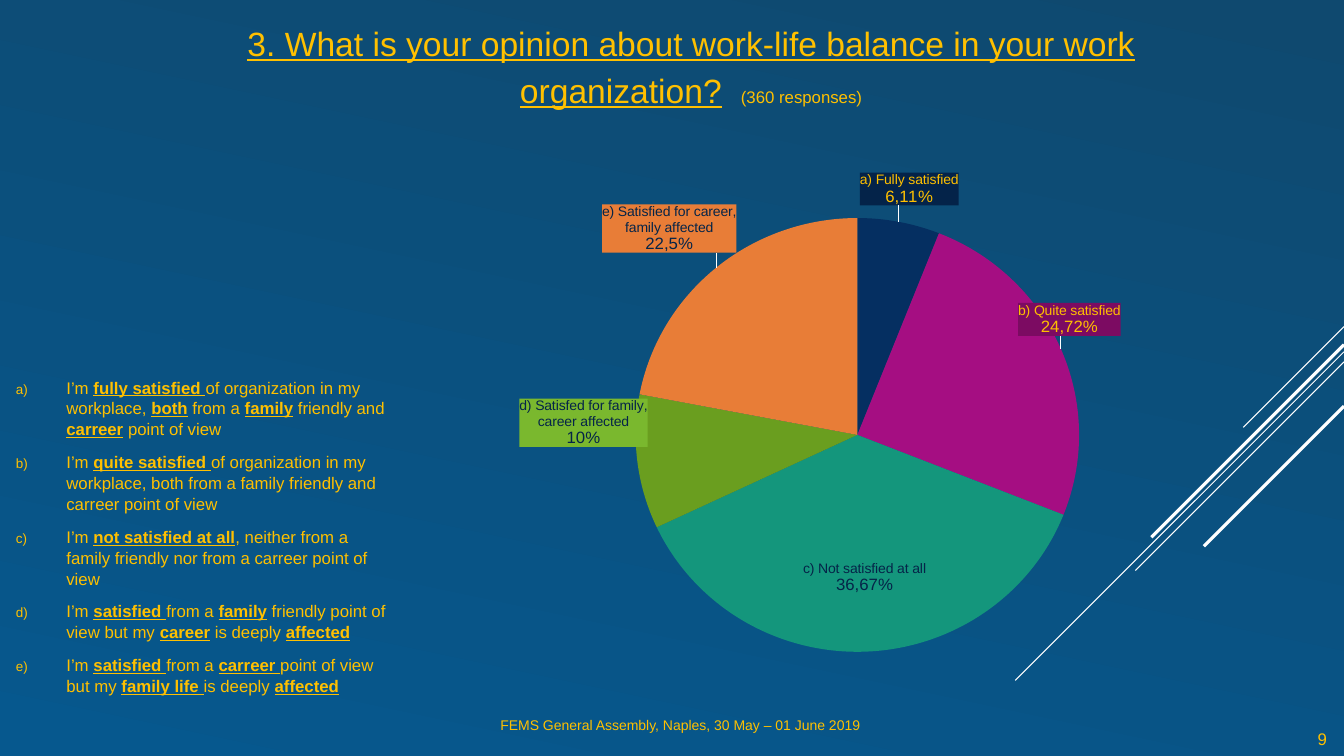
from lxml import etree
from pptx import Presentation
from pptx.chart.data import CategoryChartData
from pptx.dml.color import RGBColor
from pptx.enum.chart import XL_CHART_TYPE as ChartType, XL_LABEL_POSITION as LabelPosition
from pptx.enum.shapes import MSO_CONNECTOR as Connector
from pptx.enum.text import MSO_ANCHOR as Anchor, PP_ALIGN as Align
from pptx.oxml import parse_xml
from pptx.oxml.ns import nsdecls, qn
from pptx.util import Inches, Pt

FONT = "Arial"
GOLD = RGBColor(0xFF, 0xC0, 0x00)
WHITE = RGBColor(0xFF, 0xFF, 0xFF)
INK = RGBColor(0x05, 0x24, 0x48)
SKY_TOP = RGBColor(0x0F, 0x49, 0x6F)
SKY_BOTTOM = RGBColor(0x06, 0x58, 0x8E)
NAVY = RGBColor(0x05, 0x2F, 0x61)
NAVY_DARK = RGBColor(0x04, 0x23, 0x49)
PURPLE = RGBColor(0xA5, 0x0E, 0x82)
PURPLE_DARK = RGBColor(0x7C, 0x0B, 0x62)
TEAL = RGBColor(0x14, 0x96, 0x7C)
GREEN = RGBColor(0x6A, 0x9E, 0x1F)
GREEN_LIGHT = RGBColor(0x7A, 0xB8, 0x2E)
ORANGE = RGBColor(0xE8, 0x7D, 0x37)

# Right end, horizontal reach of the 45 degree stroke, width in points
STROKES = [(3.24, 1, 0.75), (3.49, 3.26, 0.75), (3.59, 2.07, 0.75),
           (3.42, 1.91, 2.25), (4.03, 1.39, 2.25)]

# Text between asterisks is bold and underlined
ANSWERS = [
    "I’m *fully satisfied *of organization in my workplace, *both* from a *family* "
    "friendly and *carreer* point of view",
    "I’m *quite satisfied *of organization in my workplace, both from a family "
    "friendly and carreer point of view",
    "I’m *not satisfied at all*, neither from a family friendly nor from a carreer "
    "point of view",
    "I’m *satisfied *from a *family* friendly point of view but my *career* is deeply "
    "*affected*",
    "I’m *satisfied *from a *carreer *point of view but my *family life *is deeply "
    "*affected*",
]

# Category, value, slice, label name, label share, label fill, label text, label shift
SLICES = [
    ("a", 6, NAVY, "a) Fully satisfied", "6,11%", NAVY_DARK, GOLD, (-0.05, -0.02)),
    ("b", 25, PURPLE, "b) Quite satisfied", "24,72%", PURPLE_DARK, GOLD, (-0.06, -0.02)),
    ("c", 37, TEAL, "c) Not satisfied at all", "36,67%", TEAL, INK, (0, -0.18)),
    ("d", 10, GREEN, "d) Satisfed for family, career affected", "10%",
     GREEN_LIGHT, INK, (0.02, -0.12)),
    ("e", 22, ORANGE, "e) Satisfied for career, family affected", "22,5%",
     ORANGE, INK, (0.03, -0.02)),
]


def add_span(para, text, size, color=GOLD, strong=False, underline=False):
    span = para.add_run()
    span.text = text
    font = span.font
    font.name, font.size, font.color.rgb = FONT, Pt(size), color
    font.bold, font.underline = strong, underline
    return span


def add_box(slide, left, top, width, height, anchor=Anchor.TOP):
    box = slide.shapes.add_textbox(Inches(left), Inches(top), Inches(width), Inches(height))
    frame = box.text_frame
    frame.word_wrap = True
    frame.vertical_anchor = anchor
    return frame


def add_line_of_text(slide, place, text, size, align, anchor=Anchor.TOP):
    para = add_box(slide, *place, anchor).paragraphs[0]
    para.alignment = align
    add_span(para, text, size)


def add_stroke(slide, right_y, reach, width):
    edge = 13.33
    line = slide.shapes.add_connector(Connector.STRAIGHT, Inches(edge), Inches(right_y),
                                      Inches(edge - reach), Inches(right_y + reach))
    line.line.color.rgb = WHITE
    line.line.width = Pt(width)
    etree.SubElement(line._element.spPr, qn("a:effectLst"))


def add_title(slide):
    para = add_box(slide, 1.91, 0.12, 9.89, 0.99).paragraphs[0]
    para.alignment = Align.CENTER
    para.line_spacing = 1.15
    add_span(para, "3. What is your opinion about work-life balance in your work "
                   "organization?", 24, underline=True)
    gap = add_span(para, " ", 24)
    gap.font._element.set("spc", "700")
    add_span(para, "(360 responses)", 12)


def add_answers(slide):
    frame = add_box(slide, 0.06, 3.47, 3.91, 3.7, Anchor.MIDDLE)
    for index, answer in enumerate(ANSWERS):
        para = frame.add_paragraph() if index else frame.paragraphs[0]
        props = para._p.get_or_add_pPr()
        props.set("marL", str(Inches(0.5)))
        props.set("indent", str(-Inches(0.5)))
        color = etree.SubElement(props, qn("a:buClr"))
        etree.SubElement(color, qn("a:srgbClr"), val=str(GOLD))
        etree.SubElement(props, qn("a:buSzPct"), val="80000")
        etree.SubElement(props, qn("a:buFont"), typeface=FONT)
        etree.SubElement(props, qn("a:buAutoNum"), type="alphaLcParenR")
        para.line_spacing = 1.04
        para.space_before = Pt(2.4 if index else 0)
        para.space_after = Pt(6)
        for part, text in enumerate(answer.split("*")):
            if text:
                marked = part % 2 == 1
                add_span(para, text, 12, strong=marked, underline=marked)


def layout_xml(x, y, extra=""):
    return parse_xml(f'<c:layout {nsdecls("c")}><c:manualLayout>{extra}'
                     f'<c:x val="{x}"/><c:y val="{y}"/></c:manualLayout></c:layout>')


def add_label(point, name, share, fill, color, shift):
    label = point.data_label
    frame = label.text_frame
    add_span(frame.paragraphs[0], name, 10, color)
    add_span(frame.add_paragraph(), share, 12, color)
    label.position = LabelPosition.OUTSIDE_END
    element = label._dLbl
    element.find(qn("c:idx")).addnext(layout_xml(*shift))
    element.find(qn("c:tx")).addnext(parse_xml(
        f'<c:spPr {nsdecls("c", "a")}><a:solidFill><a:srgbClr val="{fill}"/>'
        '</a:solidFill></c:spPr>'))


def add_pie(slide):
    data = CategoryChartData()
    data.categories = [row[0] for row in SLICES]
    data.add_series("Series 1", [row[1] for row in SLICES])
    chart = slide.shapes.add_chart(ChartType.PIE, Inches(4.24), Inches(1.42),
                                   Inches(7.97), Inches(5.43), data).chart
    chart.has_legend = chart.has_title = False
    chart.font.name, chart.font.size, chart.font.color.rgb = FONT, Pt(10), WHITE
    plot = chart.plots[0]
    plot.vary_by_categories = True
    series = plot.series[0]

    # Slices and their labels
    for index, (_, _, color, *label) in enumerate(SLICES):
        point = series.points[index]
        point.format.fill.solid()
        point.format.fill.fore_color.rgb = color
        add_label(point, *label)

    # Labels as a whole, with white leader lines
    labels = series.data_labels
    labels.show_category_name = labels.show_percentage = True
    labels.show_value = False
    labels.position = LabelPosition.OUTSIDE_END
    group = labels._element
    for old in group.findall(qn("c:showLeaderLines")):
        group.remove(old)
    etree.SubElement(group, qn("c:showLeaderLines"), val="1")
    group.append(parse_xml(
        f'<c:leaderLines {nsdecls("c", "a")}><c:spPr><a:ln w="9525"><a:solidFill>'
        f'<a:srgbClr val="{WHITE}"/></a:solidFill></a:ln></c:spPr></c:leaderLines>'))

    # Place of the pie inside the chart
    area = chart._chartSpace.chart.plotArea
    for old in area.findall(qn("c:layout")):
        area.remove(old)
    layout = layout_xml(0.12, 0.14, '<c:layoutTarget val="inner"/><c:xMode val="edge"/>'
                                    '<c:yMode val="edge"/>')
    for tag, size in (("c:w", "0.83"), ("c:h", "0.81")):
        etree.SubElement(layout[0], qn(tag), val=size)
    area.insert(0, layout)


def main():
    deck = Presentation()
    deck.slide_width, deck.slide_height = Inches(13.33), Inches(7.5)
    slide = deck.slides.add_slide(deck.slide_layouts[6])

    # Background
    fill = slide.background.fill
    fill.gradient()
    fill.gradient_angle = 258
    for stop, color in zip(fill.gradient_stops, (SKY_TOP, SKY_BOTTOM)):
        stop.color.rgb = color
    for stroke in STROKES:
        add_stroke(slide, *stroke)

    # Content
    add_answers(slide)
    add_line_of_text(slide, (2.62, 7.06, 8.25, 0.4),
                     "FEMS General Assembly, Naples, 30 May – 01 June 2019", 10, Align.CENTER)
    add_line_of_text(slide, (12.01, 6.75, 1.25, 0.73), "9", 12, Align.RIGHT, Anchor.BOTTOM)
    add_title(slide)
    add_pie(slide)
    deck.save("out.pptx")


if __name__ == "__main__":
    main()
